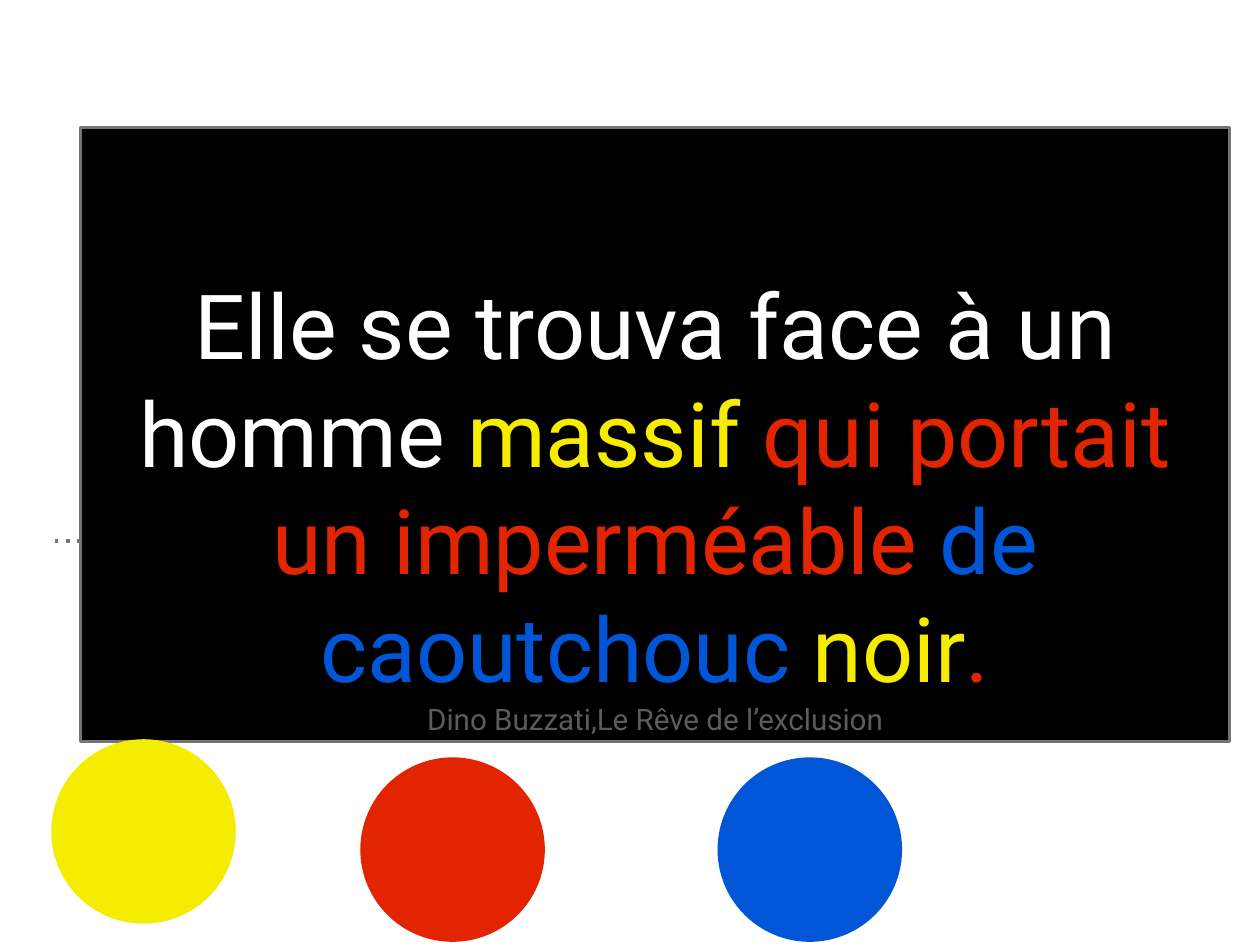
from lxml import etree
from pptx import Presentation
from pptx.dml.color import RGBColor
from pptx.enum.shapes import MSO_CONNECTOR, MSO_SHAPE
from pptx.enum.text import MSO_ANCHOR, PP_ALIGN
from pptx.oxml.ns import qn
from pptx.util import Cm, Pt

STRAIGHT = MSO_CONNECTOR.STRAIGHT
RECTANGLE, OVAL = MSO_SHAPE.RECTANGLE, MSO_SHAPE.OVAL
BOTTOM, CENTER = MSO_ANCHOR.BOTTOM, PP_ALIGN.CENTER

WHITE = RGBColor(0xFF, 0xFF, 0xFF)
BLACK = RGBColor(0x00, 0x00, 0x00)
YELLOW = RGBColor(0xF5, 0xEC, 0x00)
RED = RGBColor(0xE2, 0x24, 0x00)
BLUE = RGBColor(0x00, 0x56, 0xD6)
LINE_GRAY = RGBColor(0x74, 0x76, 0x76)
SOURCE_GRAY = RGBColor(0x5C, 0x5C, 0x5C)

QUOTE = [
    ("Elle se trouva face à un homme ", WHITE),
    ("massif ", YELLOW),
    ("qui portait un imperméable ", RED),
    ("de caoutchouc ", BLUE),
    ("noir", YELLOW),
    (".", RED),
]
SOURCE = [("Dino Buzzati,Le Rêve de l’exclusion", SOURCE_GRAY)]
CIRCLES = [(1.47, 21.2, YELLOW), (10.33, 21.72, RED), (20.57, 21.72, BLUE)]
CIRCLE_SIZE = 5.29


def add_filled_shape(kind, left, top, width, height, color):
    shape = slide.shapes.add_shape(kind, Cm(left), Cm(top), Cm(width), Cm(height))
    shape.shadow.inherit = False
    shape.fill.solid()
    shape.fill.fore_color.rgb = color
    shape.line.fill.background()
    return shape


presentation = Presentation()
presentation.slide_width = Cm(36.12)
presentation.slide_height = Cm(27.1)
slide = presentation.slides.add_slide(presentation.slide_layouts[6])

# Dotted rule, mostly behind the panel
rule = slide.shapes.add_connector(STRAIGHT, Cm(1.57), Cm(15.52), Cm(34.57), Cm(15.52))
rule.line.color.rgb = LINE_GRAY
rule.line.width = Pt(3)
dashes = etree.SubElement(rule.line._get_or_add_ln(), qn("a:custDash"))
etree.SubElement(dashes, qn("a:ds"), d="100000", sp="200000")
etree.SubElement(rule._element.spPr, qn("a:effectLst"))

# Quotation panel
panel = add_filled_shape(RECTANGLE, 2.31, 3.66, 32.94, 17.6, BLACK)
panel.line.color.rgb = LINE_GRAY
panel.line.width = Pt(2)
text_frame = panel.text_frame
frame_format = {"word_wrap": True, "vertical_anchor": BOTTOM}
for side in ("left", "top", "right", "bottom"):
    frame_format[f"margin_{side}"] = Cm(0.15)
for name, value in frame_format.items():
    setattr(text_frame, name, value)

paragraphs = [text_frame.paragraphs[0], text_frame.add_paragraph()]
for paragraph, parts, size in zip(paragraphs, (QUOTE, SOURCE), (73, 24)):
    paragraph.alignment = CENTER
    for text, color in parts:
        run = paragraph.add_run()
        run.text = text
        run.font.name = "Roboto"
        run.font.size = Pt(size)
        run.font.color.rgb = color

# Color key
for left, top, color in CIRCLES:
    add_filled_shape(OVAL, left, top, CIRCLE_SIZE, CIRCLE_SIZE, color)

presentation.save("out.pptx")
